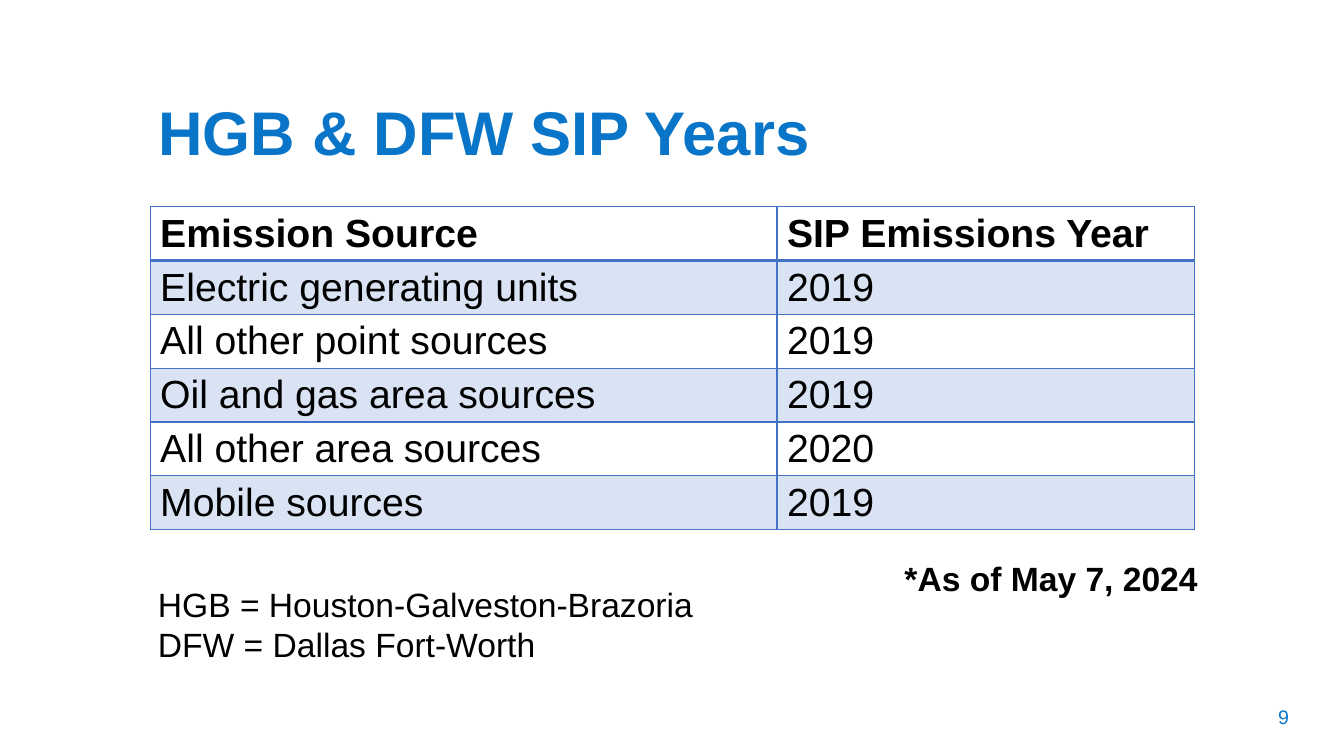
from dataclasses import dataclass

from lxml import etree
from pptx import Presentation
from pptx.dml.color import RGBColor
from pptx.enum.text import MSO_ANCHOR, MSO_AUTO_SIZE, PP_ALIGN
from pptx.oxml.ns import qn
from pptx.util import Emu, Pt

LEFT, CENTER = PP_ALIGN.LEFT, PP_ALIGN.CENTER
TOP, MIDDLE = MSO_ANCHOR.TOP, MSO_ANCHOR.MIDDLE
NO_AUTOFIT = MSO_AUTO_SIZE.NONE
EMU_PER_PX = 9525
TITLE_ONLY_LAYOUT = 5


@dataclass(frozen=True)
class Theme:
    font: str = "Arial"
    accent: str = "0875C8"
    ink: str = "000000"
    rule: str = "4472C4"
    band: str = "DAE3F3"
    title_size: int = 44
    table_size: int = 28
    note_size: int = 24
    number_size: int = 14


def px(length):
    return Emu(length * EMU_PER_PX)


def write_text(frame, text, *, font, size, color, bold=False, align=LEFT,
               anchor=TOP, line_spacing=1.0):
    frame.word_wrap = True
    frame.vertical_anchor = anchor
    for index, line in enumerate(text.split("\n")):
        paragraph = frame.add_paragraph() if index else frame.paragraphs[0]
        paragraph.alignment = align
        paragraph.line_spacing = line_spacing
        run = paragraph.add_run()
        run.text = line
        run.font.name = font
        run.font.size = Pt(size)
        run.font.bold = bold
        run.font.color.rgb = RGBColor.from_string(color)


class SlideBuilder:
    def __init__(self, presentation, theme):
        self.theme = theme
        layout = presentation.slide_layouts[TITLE_ONLY_LAYOUT]
        self.slide = presentation.slides.add_slide(layout)

    def title(self, text, left, top, width, height):
        shape = self.slide.shapes.title
        shape.left, shape.top = px(left), px(top)
        shape.width, shape.height = px(width), px(height)
        shape.text_frame.auto_size = NO_AUTOFIT
        write_text(shape.text_frame, text, font=self.theme.font,
                   size=self.theme.title_size, color=self.theme.accent,
                   bold=True, line_spacing=0.9)

    def text(self, text, left, top, width, height, **text_format):
        shape = self.slide.shapes.add_textbox(px(left), px(top), px(width), px(height))
        write_text(shape.text_frame, text, font=self.theme.font, **text_format)

    def border(self, cell, side, points):
        properties = cell._tc.get_or_add_tcPr()
        line = etree.SubElement(properties, qn(f"a:ln{side}"), w=str(Pt(points)))
        fill = etree.SubElement(line, qn("a:solidFill"))
        etree.SubElement(fill, qn("a:srgbClr"), val=self.theme.rule)

    def table(self, rows, left, top, column_widths, row_height):
        frame = self.slide.shapes.add_table(
            len(rows), len(column_widths), px(left), px(top),
            px(sum(column_widths)), px(row_height * len(rows)))
        table = frame.table
        for column, width in zip(table.columns, column_widths):
            column.width = px(width)
        for row_index, values in enumerate(rows):
            table.rows[row_index].height = px(row_height)
            top_rule = 2 if row_index == 1 else 1
            bottom_rule = 2 if row_index == 0 else 1
            for column_index, value in enumerate(values):
                cell = table.cell(row_index, column_index)
                write_text(cell.text_frame, value, font=self.theme.font,
                           size=self.theme.table_size, color=self.theme.ink,
                           bold=row_index == 0)
                for side, points in zip("LRTB", (1, 1, top_rule, bottom_rule)):
                    self.border(cell, side, points)
                if row_index % 2:
                    cell.fill.solid()
                    cell.fill.fore_color.rgb = RGBColor.from_string(self.theme.band)
                else:
                    cell.fill.background()


def main():
    presentation = Presentation()
    presentation.slide_width, presentation.slide_height = px(1280), px(720)
    theme = Theme()
    builder = SlideBuilder(presentation, theme)

    builder.title("HGB & DFW SIP Years", 141, 93, 990, 139)
    emission_years = [
        ("Emission Source", "SIP Emissions Year"),
        ("Electric generating units", "2019"),
        ("All other point sources", "2019"),
        ("Oil and gas area sources", "2019"),
        ("All other area sources", "2020"),
        ("Mobile sources", "2019"),
    ]
    builder.table(emission_years, 143, 197, (597, 398), 51)
    builder.text("*As of May 7, 2024", 852, 531, 301, 39, size=theme.note_size,
                 color=theme.ink, bold=True, anchor=MIDDLE)
    builder.text("HGB = Houston-Galveston-Brazoria\nDFW = Dallas Fort-Worth",
                 141, 551, 638, 87, size=theme.note_size, color=theme.ink)
    builder.text("9", 1180, 667, 85, 38, size=theme.number_size,
                 color=theme.accent, align=CENTER)

    presentation.save("out.pptx")


if __name__ == "__main__":
    main()
